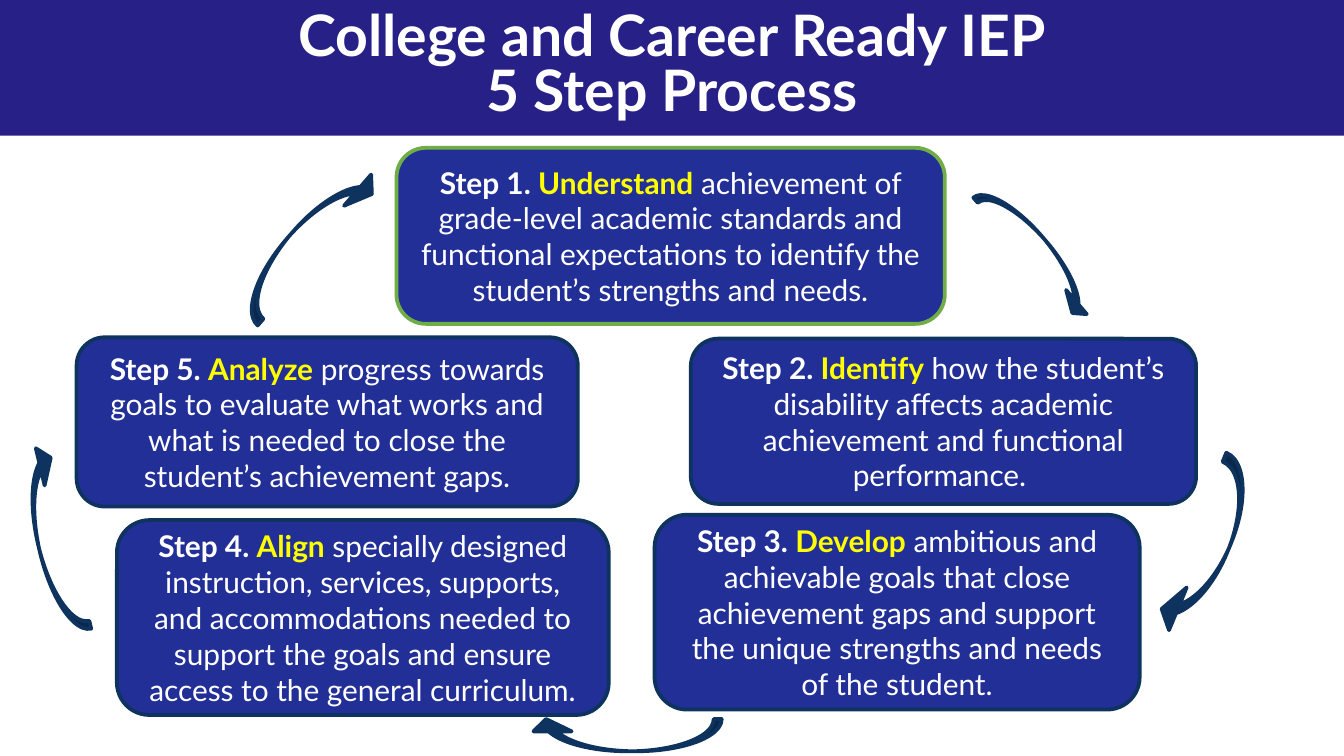
from pptx import Presentation
from pptx.dml.color import RGBColor
from pptx.enum.shapes import MSO_SHAPE as Shape
from pptx.enum.text import MSO_ANCHOR as Anchor, PP_ALIGN as Align
from pptx.util import Inches, Pt

# Content
TITLE = ["College and Career Ready IEP", "5 Step Process"]
COLORS = {
    "banner": "262087", "box": "222F97", "navy": "0D335E",
    "green": "70AD47", "white": "FFFFFF", "yellow": "FFFF00",
}

# Places are left, top, width, height in grid units (100 columns across the slide)
STEPS = [
    ("Understand", "achievement of grade-level academic standards and functional "
     "expectations to identify the student’s strengths and needs.",
     "green", (29.5, 11, 40.8, 13.1)),
    ("Identify", "how the student’s disability affects academic achievement "
     "and functional performance. ",
     "navy", (51.4, 25.2, 37.6, 12.3)),
    ("Develop", "ambitious and achievable goals that close achievement gaps and "
     "support the unique strengths and needs of the student.",
     "navy", (48.7, 38.3, 36.1, 14.5)),
    ("Align", "specially designed instruction, services, supports, and accommodations "
     "needed to support the goals and ensure access to the general curriculum.",
     "navy", (8.7, 38.7, 36.6, 14.5)),
    ("Analyze", "progress towards goals to evaluate what works and what is needed "
     "to close the student’s achievement gaps.",
     "navy", (5.7, 25.1, 37.3, 12.6)),
]
# Arrow from each step to the next: place, rotation
ARROWS = [
    ((71, 17.8, 12.5, 2), 49.4),
    ((82.7, 39.4, 14.3, 2.9), 112.5),
    ((39.2, 53.5, 14.5, 2.4), 180),
    ((-3.3, 38.8, 14.5, 2.4), 256.7),
    ((15.7, 16.6, 14.5, 2.6), 311),
]
ARROW_BEND = (0.25, 1.185, 0.383)
BANNER = (-0.1, 0, 100.1, 10.1)
TITLE_PLACE = (0, 0, 100, 10.1)

# Widescreen slide, 16 by 9
presentation = Presentation()
presentation.slide_width = Inches(10)
presentation.slide_height = presentation.slide_width * 9 // 16
slide = presentation.slides.add_slide(presentation.slide_layouts[6])
UNIT = presentation.slide_width / 100


def rgb(name):
    return RGBColor.from_string(COLORS[name])


def on_grid(place):
    return [round(UNIT * part) for part in place]


def add_shape(kind, place, fill, line=None):
    shape = slide.shapes.add_shape(kind, *on_grid(place))
    shape.shadow.inherit = False
    shape.fill.solid()
    shape.fill.fore_color.rgb = rgb(fill)
    if line:
        shape.line.color.rgb = rgb(line)
        shape.line.width = Pt(2)
    else:
        shape.line.fill.background()
    return shape


def prepare_text(shape):
    frame = shape.text_frame
    frame.word_wrap = True
    frame.vertical_anchor = Anchor.MIDDLE
    return frame


def add_run(paragraph, text, size, color="white", bold=True):
    paragraph.alignment = Align.CENTER
    run = paragraph.add_run()
    run.text = text
    style = {"name": "Lato", "size": Pt(size), "bold": bold}
    for attribute, value in style.items():
        setattr(run.font, attribute, value)
    run.font.color.rgb = rgb(color)


# Title on its banner
add_shape(Shape.RECTANGLE, BANNER, "banner")
frame = prepare_text(slide.shapes.add_textbox(*on_grid(TITLE_PLACE)))
for index, line in enumerate(TITLE):
    paragraph = frame.add_paragraph() if index else frame.paragraphs[0]
    paragraph.line_spacing = 0.8
    add_run(paragraph, line, 30.6)

# Step boxes
for number, (verb, detail, outline, place) in enumerate(STEPS, 1):
    box = add_shape(Shape.ROUNDED_RECTANGLE, place, "box", outline)
    paragraph = prepare_text(box).paragraphs[0]
    add_run(paragraph, f"Step {number}. ", 16)
    add_run(paragraph, verb, 16, "yellow")
    add_run(paragraph, f" {detail}", 16, bold=False)

# Cycle arrows
for place, rotation in ARROWS:
    arrow = add_shape(Shape.CURVED_DOWN_ARROW, place, "navy", "navy")
    arrow.rotation = rotation
    for index, bend in enumerate(ARROW_BEND):
        arrow.adjustments[index] = bend

presentation.save("out.pptx")
